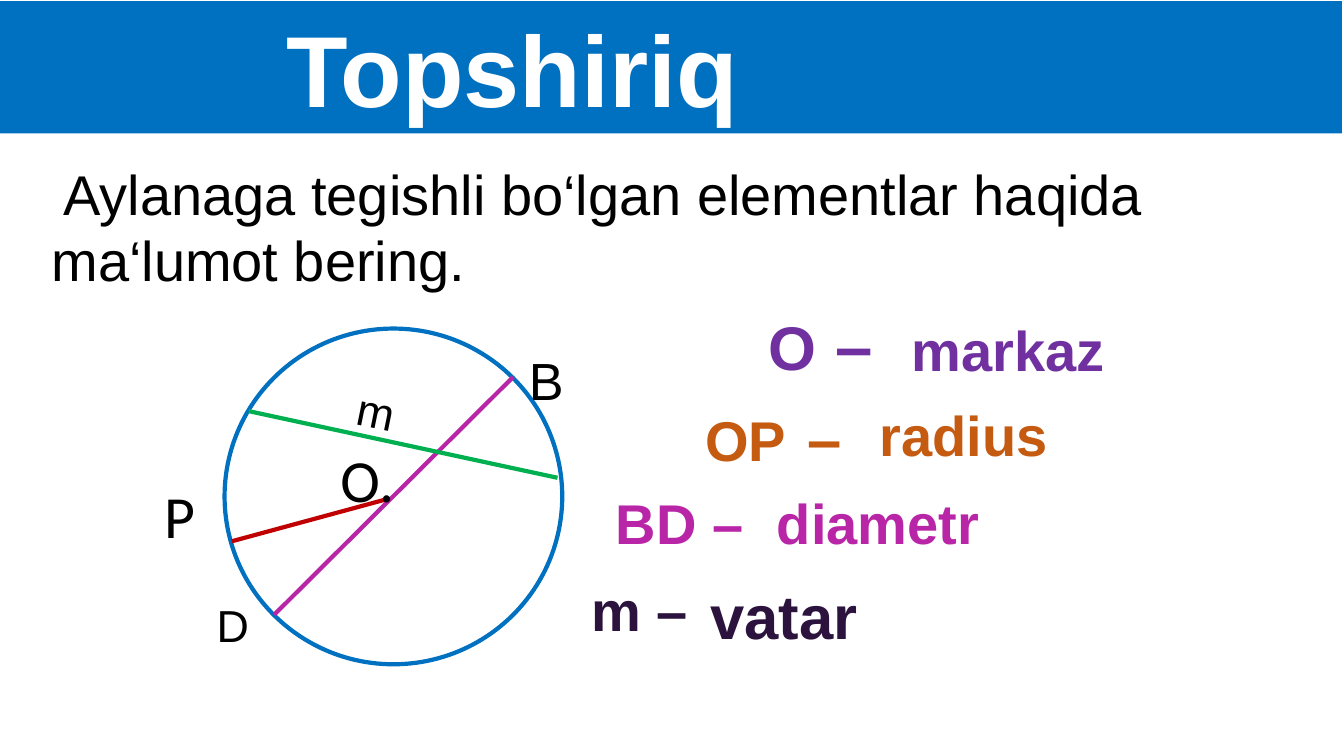
"""Build a slide that names the elements of a circle: centre, radius, diameter and chord."""
from dataclasses import dataclass

from lxml.etree import SubElement
from pptx import Presentation
from pptx.dml.color import RGBColor
from pptx.enum.shapes import MSO_CONNECTOR, MSO_SHAPE
from pptx.enum.text import MSO_ANCHOR, PP_ALIGN
from pptx.oxml.ns import qn
from pptx.util import Cm, Pt


@dataclass(frozen=True)
class Theme:
    blue: str = "0070C0"
    white: str = "FFFFFF"
    black: str = "000000"
    purple: str = "7030A0"
    orange: str = "C55A11"
    magenta: str = "B925A7"
    green: str = "00B050"
    red: str = "C00000"
    plum: str = "2B133D"
    font: str = "Arial"
    point_font: str = "Calibri"
    title: float = 72
    gap: float = 53.3
    wide: float = 48
    large: float = 44
    point: float = 42.7
    body: float = 40
    end: float = 37.3
    small: float = 32
    stroke: float = 3


@dataclass(frozen=True)
class Run:
    text: str
    size: float
    color: str
    bold: bool = True
    font: str = "Arial"


@dataclass(frozen=True)
class Label:
    left: float
    top: float
    width: float
    height: float
    runs: tuple[Run, ...]
    rotation: float = 0


@dataclass(frozen=True)
class Segment:
    x1: float
    y1: float
    x2: float
    y2: float
    color: str


T = Theme()

SEGMENTS = (
    Segment(6.91, 15.49, 12.93, 9.5, T.magenta),
    Segment(6.27, 10.36, 14.05, 12.04, T.green),
    Segment(5.84, 13.64, 9.78, 12.57, T.red),
)

FIGURE_LABELS = (
    Label(8.76, 9.55, 1.47, 1.63, (Run("m", T.small, T.black, False),), 11.5),
    Label(13.08, 8.66, 1.7, 1.85, (Run("B", T.end, T.black, False),)),
    Label(8.33, 11.02, 1.88, 2.08, (Run("O.", T.point, T.black, False, T.point_font),)),
    Label(3.89, 11.94, 1.3, 2.08, (Run("P", T.point, T.black, False, T.point_font),)),
    Label(5.21, 14.94, 1.35, 1.63, (Run("D", T.small, T.black, False),)),
)

DEFINITIONS = (
    Label(19.13, 7.52, 3.18, 2.31, (
        Run("O", T.large, T.purple),
        Run(" ", T.wide, T.purple, False),
        Run("–", T.wide, T.purple),
    )),
    Label(22.73, 7.82, 5.44, 1.96, (Run("markaz", T.body, T.purple),)),
    Label(17.53, 9.63, 3.96, 2.55, (
        Run("OP", T.body, T.orange),
        Run(" ", T.gap, T.black, False),
        Run("–", T.large, T.orange),
    )),
    Label(21.92, 9.98, 4.78, 1.96, (Run("radius", T.body, T.orange),)),
    Label(15.27, 12.19, 3.76, 1.96, (Run("BD –", T.body, T.magenta),)),
    Label(19.33, 12.19, 5.66, 1.96, (Run("diametr", T.body, T.magenta),)),
    Label(14.66, 14.38, 2.97, 1.96, (Run("m –", T.body, T.plum),)),
    Label(17.65, 14.43, 4.27, 2.13, (Run("vatar", T.large, T.plum),)),
)


def rgb(color: str) -> RGBColor:
    return RGBColor.from_string(color)


def add_run(p, run: Run) -> None:
    r = p.add_run()
    r.text = run.text
    r.font.name = run.font
    r.font.size = Pt(run.size)
    r.font.bold = run.bold
    r.font.color.rgb = rgb(run.color)


def format_title(slide) -> None:
    sp = slide.shapes.title
    sp.left, sp.top, sp.width, sp.height = Cm(-0.05), Cm(0.03), Cm(33.87), Cm(3.33)
    sp.fill.solid()
    sp.fill.fore_color.rgb = rgb(T.blue)
    tf = sp.text_frame
    tf.vertical_anchor = MSO_ANCHOR.MIDDLE
    tf.margin_left, tf.margin_top, tf.margin_bottom = Cm(7.27), Cm(0.36), Cm(0)
    p = tf.paragraphs[0]
    p.alignment = PP_ALIGN.LEFT
    p.line_spacing = 0.9
    add_run(p, Run("Topshiriq", T.title, T.white))


def add_task(slide) -> None:
    tf = slide.shapes.add_textbox(Cm(0.41), Cm(3.99), Cm(32.94), Cm(3.6)).text_frame
    tf.word_wrap = True
    tf.margin_left = Cm(0.89)
    p = tf.paragraphs[0]
    p.line_spacing = 0.98
    p._p.get_or_add_pPr().set("indent", str(Cm(0.3)))
    task = "Aylanaga tegishli bo‘lgan elementlar haqida ma‘lumot bering."
    add_run(p, Run(task, T.body, T.black, False))


def add_circle(slide) -> None:
    sp = slide.shapes.add_shape(
        MSO_SHAPE.FLOWCHART_CONNECTOR, Cm(5.66), Cm(8.28), Cm(8.51), Cm(8.46))
    sp.shadow.inherit = False
    sp.fill.solid()
    sp.fill.fore_color.rgb = rgb(T.white)
    sp.line.color.rgb = rgb(T.blue)
    sp.line.width = Pt(T.stroke)


def add_segment(slide, seg: Segment) -> None:
    line = slide.shapes.add_connector(
        MSO_CONNECTOR.STRAIGHT, Cm(seg.x1), Cm(seg.y1), Cm(seg.x2), Cm(seg.y2))
    line.line.color.rgb = rgb(seg.color)
    line.line.width = Pt(T.stroke)
    SubElement(line._element.spPr, qn("a:effectLst"))


def add_label(slide, label: Label) -> None:
    sp = slide.shapes.add_textbox(
        Cm(label.left), Cm(label.top), Cm(label.width), Cm(label.height))
    sp.rotation = label.rotation
    tf = sp.text_frame
    tf.word_wrap = False
    for run in label.runs:
        add_run(tf.paragraphs[0], run)


def main() -> None:
    prs = Presentation()
    prs.slide_width, prs.slide_height = Cm(33.87), Cm(19.05)
    slide = prs.slides.add_slide(prs.slide_layouts[5])
    format_title(slide)
    add_task(slide)
    add_circle(slide)
    for seg in SEGMENTS:
        add_segment(slide, seg)
    for label in FIGURE_LABELS + DEFINITIONS:
        add_label(slide, label)
    prs.save("out.pptx")


if __name__ == "__main__":
    main()
